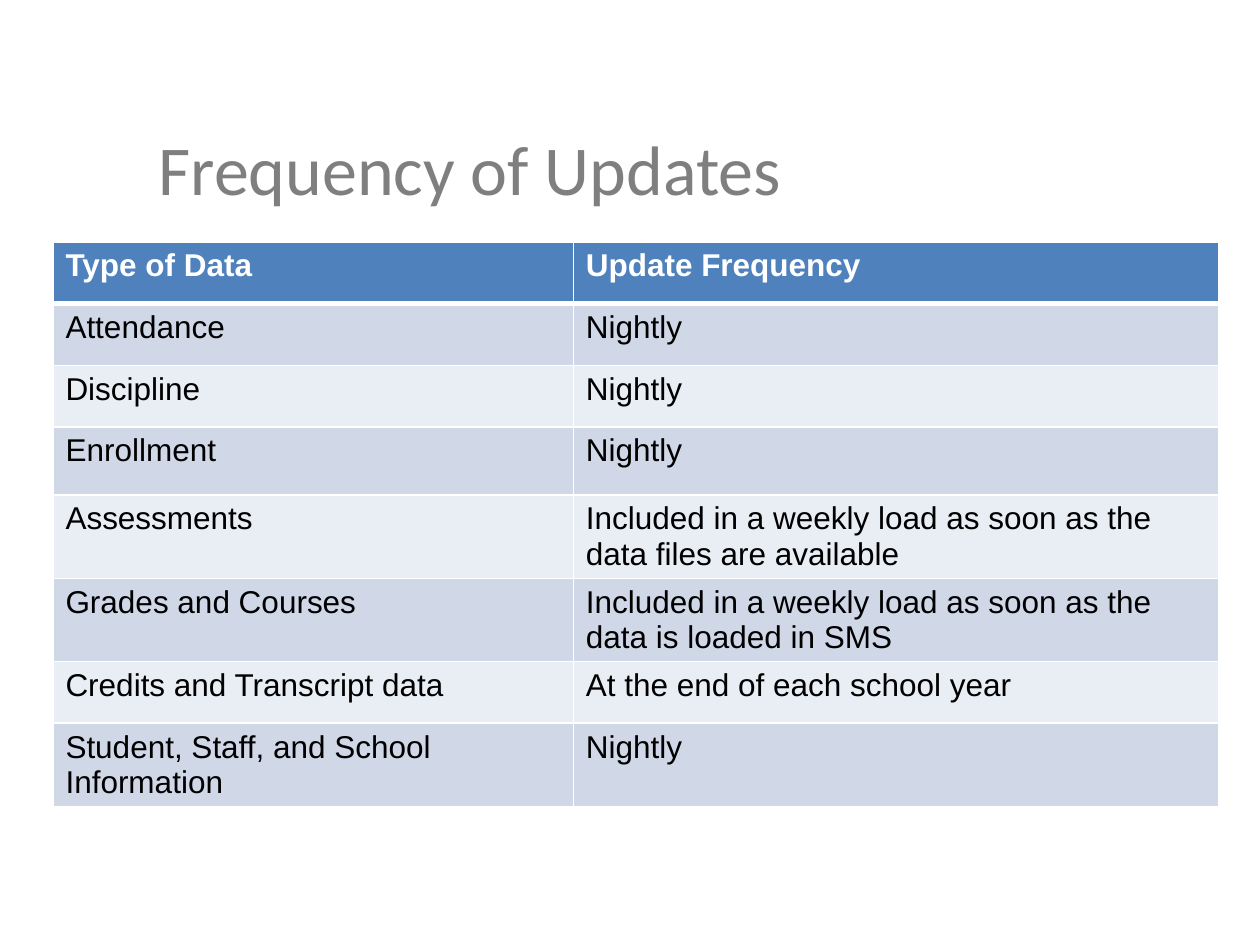
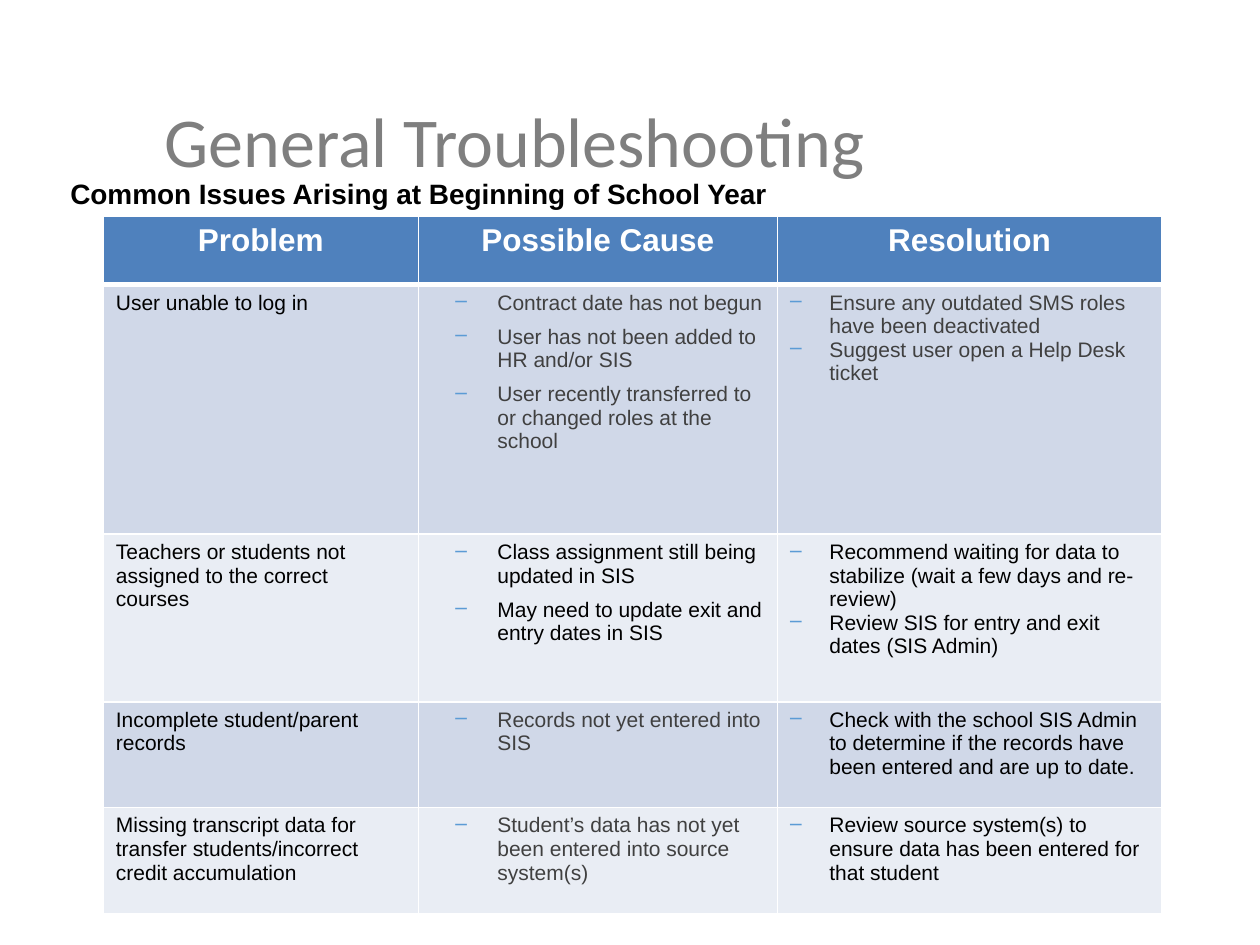
import dataclasses

import lxml.etree
import pptx
import pptx.dml.color
import pptx.enum.text
import pptx.oxml.ns
import pptx.util

Pt = pptx.util.Pt
RGB = pptx.dml.color.RGBColor.from_string
qn = pptx.oxml.ns.qn


@dataclasses.dataclass(frozen=True)
class Theme:
    title_font: str = "Calibri"
    body_font: str = "Arial"
    title_size: int = 40
    subtitle_size: int = 16
    header_size: int = 18
    detail_size: int = 12
    title: str = "7F7F7F"
    text: str = "000000"
    muted: str = "404040"
    white: str = "FFFFFF"
    header: str = "4F81BD"
    bands: tuple = ("D0D8E8", "E9EDF4")
    bullet: str = "5B9BD5"
    rule: int = 1
    header_rule: int = 3


THEME = Theme()
TITLE_SIZE = (636.5, 50.4)
CAUSE_LIST = (38, -24, 6)
RESOLUTION_LIST = (22.5, -22.5, 0)

UPDATES = [
    ("Type of Data", "Update Frequency"),
    ("Attendance", "Nightly"),
    ("Discipline", "Nightly"),
    ("Enrollment", "Nightly"),
    ("Assessments", "Included in a weekly load as soon as the data files are available"),
    ("Grades and Courses", "Included in a weekly load as soon as the data is loaded in SMS"),
    ("Credits and Transcript data", "At the end of each school year"),
    ("Student, Staff, and School Information", "Nightly"),
]

ISSUES = [
    ("Problem", "Possible Cause", "Resolution"),
    ("User unable to log in",
     "Contract date has not begun\n"
     "User has not been added to HR and/or SIS\n"
     "User recently transferred to or changed roles at the school",
     "Ensure any outdated SMS roles have been deactivated\n"
     "Suggest user open a Help Desk ticket"),
    ("Teachers or students not assigned to the correct courses",
     "Class assignment still being updated in SIS\n"
     "May need to update exit and entry dates in SIS",
     "Recommend waiting for data to stabilize (wait a few days and re-review)\n"
     "Review SIS for entry and exit dates (SIS Admin)"),
    ("Incomplete student/parent records",
     "Records not yet entered into SIS",
     "Check with the school SIS Admin to determine if the records have been entered "
     "and are up to date."),
    ("Missing transcript data for transfer students/incorrect credit accumulation",
     "Student’s data has not yet been entered into source system(s)",
     "Review source system(s) to ensure data has been entered for that student"),
]
MUTED_ISSUES = {(1, 1), (1, 2), (3, 1), (4, 1)}


def format_runs(tf, font, size, color, bold=False):
    for p in tf.paragraphs:
        for r in p.runs:
            r.font.name = font
            r.font.size = Pt(size)
            r.font.bold = bold
            r.font.color.rgb = RGB(color)


def add_text(s, box, text, font, size, color, bold=False, anchor="TOP"):
    tf = s.shapes.add_textbox(*map(Pt, box)).text_frame
    tf.word_wrap = True
    tf.vertical_anchor = pptx.enum.text.MSO_ANCHOR[anchor]
    tf.text = text
    format_runs(tf, font, size, color, bold)


def add_title(s, left, top, text):
    add_text(s, (left, top, *TITLE_SIZE), text, THEME.title_font,
             THEME.title_size, THEME.title, anchor="BOTTOM")


def set_borders(cell, row):
    top = THEME.header_rule if row == 1 else THEME.rule
    bottom = THEME.header_rule if row == 0 else THEME.rule
    widths = {"a:lnL": THEME.rule, "a:lnR": THEME.rule, "a:lnT": top, "a:lnB": bottom}
    tcPr = cell._tc.get_or_add_tcPr()
    for i, (tag, width) in enumerate(widths.items()):
        ln = lxml.etree.Element(qn(tag), w=str(Pt(width)))
        fill = lxml.etree.SubElement(ln, qn("a:solidFill"))
        lxml.etree.SubElement(fill, qn("a:srgbClr"), val=THEME.white)
        tcPr.insert(i, ln)


def set_bullets(tf, margin, indent, after):
    for p in tf.paragraphs:
        pPr = p._p.get_or_add_pPr()
        pPr.set("marL", str(Pt(margin)))
        pPr.set("indent", str(Pt(indent)))
        color = lxml.etree.SubElement(pPr, qn("a:buClr"))
        lxml.etree.SubElement(color, qn("a:srgbClr"), val=THEME.bullet)
        lxml.etree.SubElement(pPr, qn("a:buChar"), char="–")
        p.space_after = Pt(after)


def add_grid(s, left, top, widths, heights, rows, size, lists=None, muted=(), centered=False):
    frame = s.shapes.add_table(len(rows), len(widths), Pt(left), Pt(top),
                               Pt(sum(widths)), Pt(sum(heights)))
    table = frame.table
    for column, width in zip(table.columns, widths):
        column.width = Pt(width)
    for i, (texts, height) in enumerate(zip(rows, heights)):
        table.rows[i].height = Pt(height)
        for j, text in enumerate(texts):
            cell = table.cell(i, j)
            tf = cell.text_frame
            tf.text = text
            cell.fill.solid()
            set_borders(cell, i)
            if i == 0:
                cell.fill.fore_color.rgb = RGB(THEME.header)
                format_runs(tf, THEME.body_font, THEME.header_size, THEME.white, True)
                if centered:
                    tf.paragraphs[0].alignment = pptx.enum.text.PP_ALIGN.CENTER
                continue
            cell.fill.fore_color.rgb = RGB(THEME.bands[(i - 1) % 2])
            if lists and j in lists:
                set_bullets(tf, *lists[j])
            color = THEME.muted if (i, j) in muted else THEME.text
            format_runs(tf, THEME.body_font, size, color)


def build_updates(s):
    heights = [35.28] * len(UPDATES)
    heights[3] = 38.88
    add_grid(s, 30.24, 138.24, (297.36, 368.64), heights, UPDATES, THEME.header_size)
    add_title(s, 83.5, 72.7, "Frequency of Updates")


def build_troubleshooting(s):
    add_title(s, 87.1, 56.9, "General Troubleshooting")
    add_grid(s, 59.04, 123.84, (180, 205.2, 219.6), (38.88, 142.56, 95.76, 60.48, 60.48),
             ISSUES, THEME.detail_size, {1: CAUSE_LIST, 2: RESOLUTION_LIST},
             MUTED_ISSUES, centered=True)
    add_text(s, (33.1, 97.2, 776.2, 26.6), "Common Issues Arising at Beginning of School Year",
             THEME.body_font, THEME.subtitle_size, THEME.text, bold=True)


def main():
    prs = pptx.Presentation()
    prs.slide_width, prs.slide_height = Pt(720), Pt(540)
    for build in (build_updates, build_troubleshooting):
        build(prs.slides.add_slide(prs.slide_layouts[6]))
    prs.save("out.pptx")


if __name__ == "__main__":
    main()
